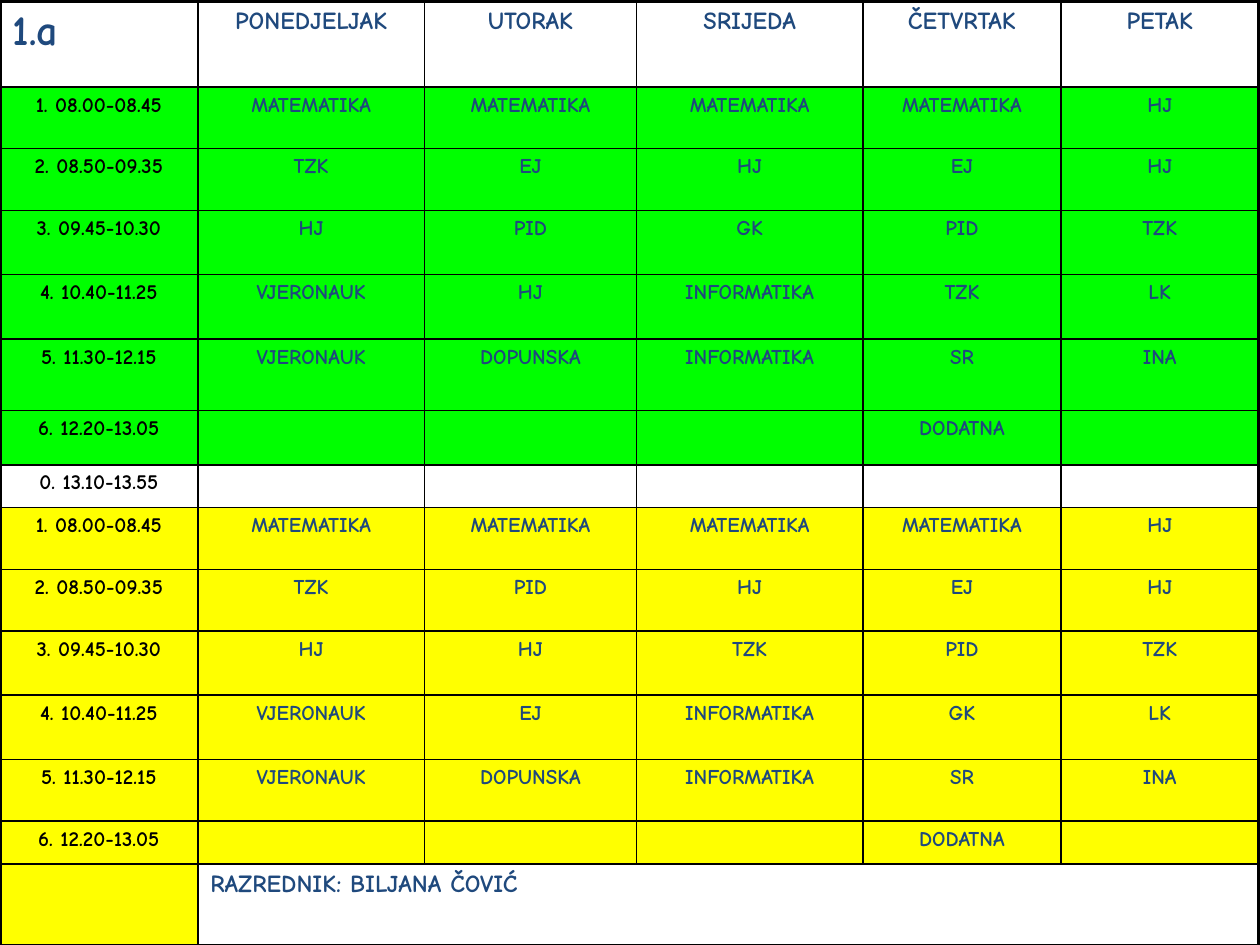
import pptx
import pptx.util
import pptx.dml.color
import pptx.enum.text
import pptx.oxml.ns
from lxml import etree

Inches, Pt = pptx.util.Inches, pptx.util.Pt
RGB = pptx.dml.color.RGBColor.from_string
qn = pptx.oxml.ns.qn
FONT = "Comic Neue"
COLORS = {"navy": "1F497D", "black": "000000", "green": "00FF00",
          "yellow": "FFFF00", "white": "FFFFFF"}

# Timetable: fill of the row, height, then its cells
ROWS = [
    ("white", 0.68, ["1.a", "PONEDJELJAK", "UTORAK", "SRIJEDA", "ČETVRTAK", "PETAK"]),
    ("green", 0.49, ["1. 08.00-08.45"] + ["MATEMATIKA"] * 4 + ["HJ"]),
    ("green", 0.49, ["2. 08.50-09.35", "TZK", "EJ", "HJ", "EJ", "HJ"]),
    ("green", 0.51, ["3. 09.45-10.30", "HJ", "PID", "GK", "PID", "TZK"]),
    ("green", 0.51, ["4. 10.40-11.25", "VJERONAUK", "HJ", "INFORMATIKA", "TZK", "LK"]),
    ("green", 0.57, ["5. 11.30-12.15", "VJERONAUK", "DOPUNSKA", "INFORMATIKA", "SR", "INA"]),
    ("green", 0.43, ["6. 12.20-13.05", "", "", "", "DODATNA", ""]),
    ("white", 0.34, ["0. 13.10-13.55", "", "", "", "", ""]),
    ("yellow", 0.49, ["1. 08.00-08.45"] + ["MATEMATIKA"] * 4 + ["HJ"]),
    ("yellow", 0.49, ["2. 08.50-09.35", "TZK", "PID", "HJ", "EJ", "HJ"]),
    ("yellow", 0.51, ["3. 09.45-10.30", "HJ", "HJ", "TZK", "PID", "TZK"]),
    ("yellow", 0.51, ["4. 10.40-11.25", "VJERONAUK", "EJ", "INFORMATIKA", "GK", "LK"]),
    ("yellow", 0.49, ["5. 11.30-12.15", "VJERONAUK", "DOPUNSKA", "INFORMATIKA", "SR", "INA"]),
    ("yellow", 0.34, ["6. 12.20-13.05", "", "", "", "DODATNA", ""]),
    ("white", 0.65, ["", "RAZREDNIK: BILJANA ČOVIĆ", "", "", "", ""]),
]
WIDTHS = [1.57, 1.8, 1.68, 1.8, 1.57, 1.57]
LAST_ROW, LAST_COL = len(ROWS) - 1, len(WIDTHS) - 1


def add_border(cell, side, width):
    line = etree.SubElement(cell._tc.get_or_add_tcPr(), qn("a:ln" + side),
                            w=str(Pt(width)))
    fill = etree.SubElement(line, qn("a:solidFill"))
    etree.SubElement(fill, qn("a:srgbClr"), val=COLORS["black"])


# Slide
deck = pptx.Presentation()
deck.slide_width, deck.slide_height = Inches(10), Inches(7.5)
slide = deck.slides.add_slide(deck.slide_layouts[6])

# Table grid
table = slide.shapes.add_table(len(ROWS), len(WIDTHS), Inches(0), Inches(0.01),
                               Inches(10), Inches(7.49)).table
table.first_row = table.horz_banding = False
for col, width in zip(table.columns, WIDTHS):
    col.width = Inches(width)

# Cells: heavy outer frame, thin inner lines
for r, (color, height, texts) in enumerate(ROWS):
    table.rows[r].height = Inches(height)
    for c, text in enumerate(texts):
        cell = table.cell(r, c)
        edges = {"L": c == 0, "R": c == LAST_COL or (r == LAST_ROW and c > 0),
                 "T": r == 0, "B": r == LAST_ROW}
        for side, outer in edges.items():
            add_border(cell, side, 2.25 if outer else 1)
        cell.fill.solid()
        shade = "yellow" if (r, c) == (LAST_ROW, 0) else color
        cell.fill.fore_color.rgb = RGB(COLORS[shade])

        para = cell.text_frame.paragraphs[0]
        para.text = text
        font = para.font
        font.name, font.bold = FONT, True
        font.size = Pt(24 if r == c == 0 else 14 if r in (0, LAST_ROW) else 12)
        is_time = c == 0 and r > 0
        font.color.rgb = RGB(COLORS["black" if is_time else "navy"])
        if r < LAST_ROW and (r, c) != (0, 0):
            para.alignment = pptx.enum.text.PP_ALIGN.CENTER
        if not text:
            # Keeps empty cells from stretching low rows
            etree.SubElement(para._p, qn("a:endParaRPr"), sz="1200")

# Class teacher spans all days
table.cell(LAST_ROW, 1).merge(table.cell(LAST_ROW, LAST_COL))

deck.save("out.pptx")
